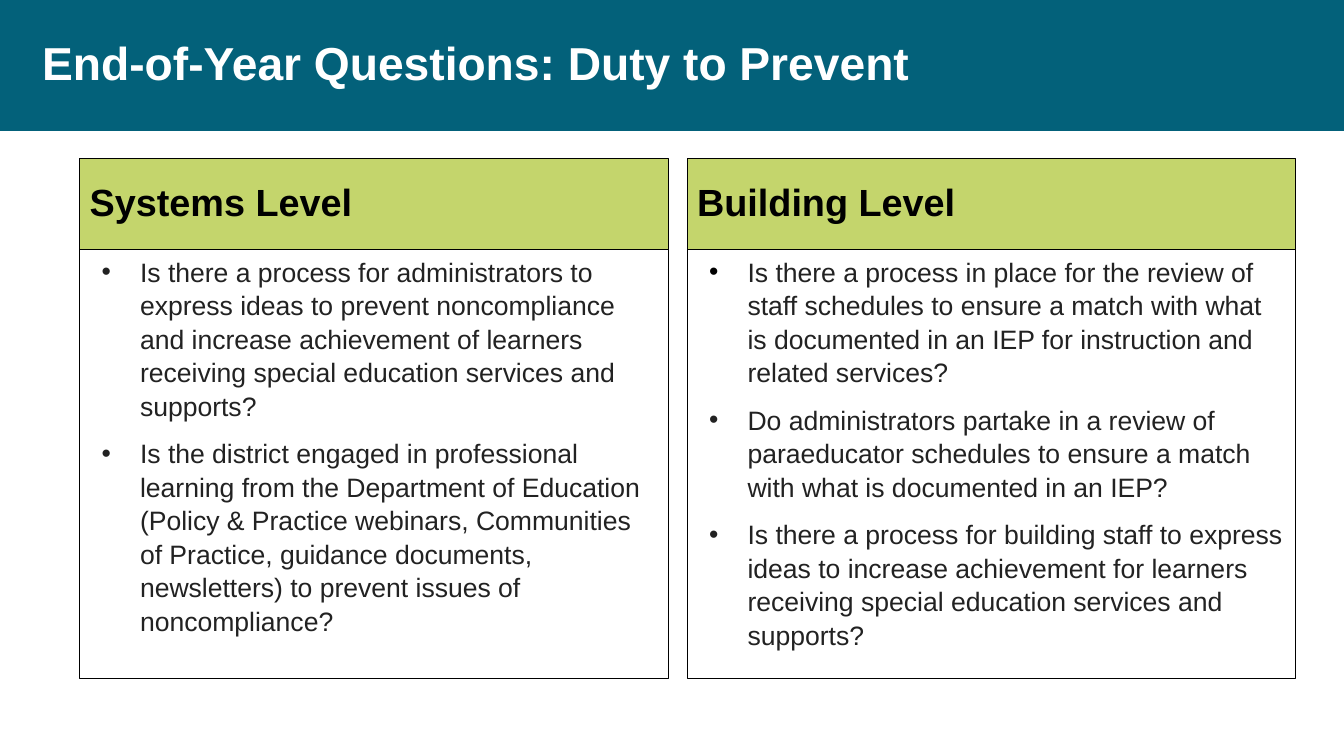
from dataclasses import dataclass

from lxml.etree import SubElement
from pptx import Presentation
from pptx.dml.color import RGBColor
from pptx.enum.shapes import MSO_SHAPE
from pptx.enum.text import MSO_ANCHOR, MSO_AUTO_SIZE, PP_ALIGN
from pptx.oxml.ns import qn
from pptx.shapes.autoshape import Shape
from pptx.slide import Slide
from pptx.text.text import _Paragraph
from pptx.util import Cm, Pt

TEAL = RGBColor(0x03, 0x61, 0x7A)
LIME = RGBColor(0xC4, 0xD5, 0x6C)
WHITE = RGBColor(0xFF, 0xFF, 0xFF)
BLACK = RGBColor(0x00, 0x00, 0x00)
INK = RGBColor(0x22, 0x22, 0x22)

WIDTH, HEIGHT = Cm(33.87), Cm(19.05)
BAND = Cm(3.3)
TOP = Cm(3.99)
HEAD = Cm(2.29)
BODY = Cm(10.82)


@dataclass
class Panel:
    left: Cm
    width: Cm
    title: str
    items: list[str]
    dot: RGBColor


PANELS = [
    Panel(Cm(2.01), Cm(14.83), "Systems Level", [
        "Is there a process for administrators to express ideas to prevent "
        "noncompliance and increase achievement of learners receiving special "
        "education services and supports?",
        "Is the district engaged in professional learning from the Department of "
        "Education (Policy & Practice webinars, Communities of Practice, guidance "
        "documents, newsletters) to prevent issues of noncompliance?",
    ], INK),
    Panel(Cm(17.32), Cm(15.32), "Building Level", [
        "Is there a process in place for the review of staff schedules to ensure a "
        "match with what is documented in an IEP for instruction and related services?",
        "Do administrators partake in a review of paraeducator schedules to ensure a "
        "match with what is documented in an IEP?",
        "Is there a process for building staff to express ideas to increase "
        "achievement for learners receiving special education services and supports?",
    ], BLACK),
]


def style(para: _Paragraph, size: int, color: RGBColor, bold: bool = False) -> None:
    para.alignment = PP_ALIGN.LEFT
    para.font.name = "Arial"
    para.font.size = Pt(size)
    para.font.bold = bold
    para.font.color.rgb = color


def bullet(para: _Paragraph, color: RGBColor) -> None:
    props = para._p.get_or_add_pPr()
    props.set("marL", str(Cm(1.27)))
    props.set("indent", str(Cm(-0.97)))
    tint = SubElement(props, qn("a:buClr"))
    SubElement(tint, qn("a:srgbClr"), val=str(color))
    SubElement(props, qn("a:buFont"), typeface="Arial")
    SubElement(props, qn("a:buChar"), char="•")


def add_box(slide: Slide, left: int, top: int, width: int, height: int,
            fill: RGBColor | None, edge: RGBColor | None) -> Shape:
    box = slide.shapes.add_shape(MSO_SHAPE.RECTANGLE, left, top, width, height)
    box.shadow.inherit = False
    if fill is None:
        box.fill.background()
    else:
        box.fill.solid()
        box.fill.fore_color.rgb = fill
    if edge is None:
        box.line.fill.background()
    else:
        box.line.color.rgb = edge
        box.line.width = Pt(0.75)
    box.text_frame.word_wrap = True
    return box


def add_title(slide: Slide, text: str) -> None:
    title = slide.shapes.title
    band = add_box(slide, 0, 0, WIDTH, BAND, TEAL, None)
    title._element.addprevious(band._element)
    title.left, title.top = Cm(0.81), 0
    title.width, title.height = Cm(29.21), BAND
    frame = title.text_frame
    frame.text = text
    frame.auto_size = MSO_AUTO_SIZE.NONE
    frame.vertical_anchor = MSO_ANCHOR.MIDDLE
    para = frame.paragraphs[0]
    para.line_spacing = 0.9
    style(para, 33, WHITE, True)


def add_panel(slide: Slide, panel: Panel) -> None:
    head = add_box(slide, panel.left, TOP, panel.width, HEAD, LIME, BLACK)
    head.text_frame.vertical_anchor = MSO_ANCHOR.MIDDLE
    para = head.text_frame.paragraphs[0]
    para.text = panel.title
    para.line_spacing = 0.9
    style(para, 27, BLACK, True)

    body = add_box(slide, panel.left, TOP + HEAD, panel.width, BODY, None, BLACK)
    frame = body.text_frame
    frame.vertical_anchor = MSO_ANCHOR.TOP
    for row, item in enumerate(panel.items):
        para = frame.add_paragraph() if row else frame.paragraphs[0]
        para.text = item
        bullet(para, INK if row else panel.dot)
        para.line_spacing = 1.05
        para.space_before = Pt(10 if row else 0)
        style(para, 19, INK)


def main() -> None:
    deck = Presentation()
    deck.slide_width, deck.slide_height = WIDTH, HEIGHT
    slide = deck.slides.add_slide(deck.slide_layouts[5])
    add_title(slide, "End-of-Year Questions: Duty to Prevent")
    for panel in PANELS:
        add_panel(slide, panel)
    deck.save("out.pptx")


if __name__ == "__main__":
    main()
